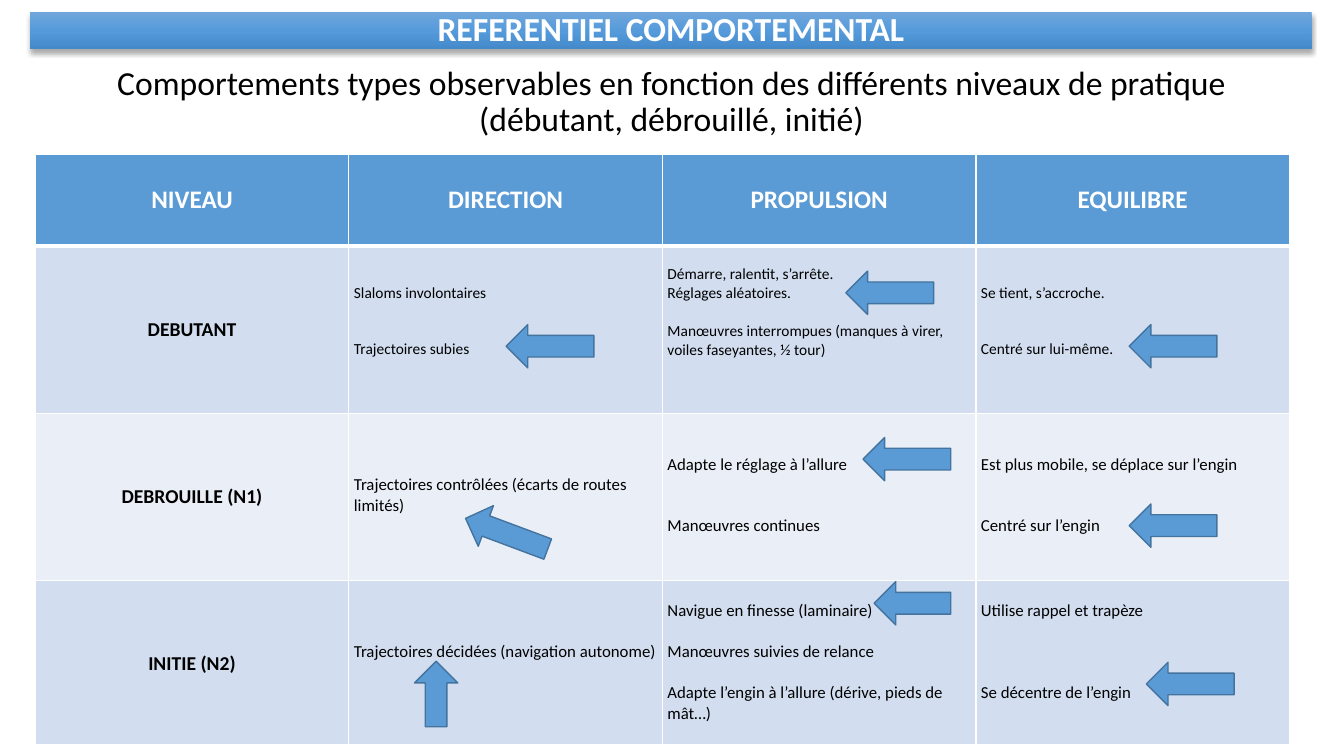
from pptx import Presentation
from pptx.dml.color import RGBColor
from pptx.enum.shapes import MSO_SHAPE as Shape
from pptx.enum.text import MSO_ANCHOR as Anchor, PP_ALIGN as Align
from pptx.oxml import parse_xml
from pptx.util import Inches, Pt

TITLE = "REFERENTIEL COMPORTEMENTAL"
SUBTITLE = ("Comportements types observables en fonction des différents niveaux de pratique"
            "\v(débutant, débrouillé, initié)")
HEADERS = ["NIVEAU", "DIRECTION", "PROPULSION", "EQUILIBRE"]

# Each text is preceded by the number of line heights left empty above it.
LEVELS = [
    ("DEBUTANT", 11, [
        [(2, "Slaloms involontaires"), (2, "Trajectoires subies")],
        [(1, "Démarre, ralentit, s’arrête."), (0, "Réglages aléatoires."),
         (1, "Manœuvres interrompues (manques à virer, voiles faseyantes, ½ tour)")],
        [(2, "Se tient, s’accroche."), (2, "Centré sur lui-même.")],
    ]),
    ("DEBROUILLE (N1)", 12, [
        [(3, "Trajectoires contrôlées (écarts de routes limités)")],
        [(2, "Adapte le réglage à l’allure"), (2, "Manœuvres continues")],
        [(2, "Est plus mobile, se déplace sur l’engin"), (2, "Centré sur l’engin")],
    ]),
    ("INITIE (N2)", 12, [
        [(3, "Trajectoires décidées (navigation autonome)")],
        [(1, "Navigue en finesse (laminaire)"), (1, "Manœuvres suivies de relance"),
         (1, "Adapte l’engin à l’allure (dérive, pieds de mât…)")],
        [(1, "Utilise rappel et trapèze"), (3, "Se décentre de l’engin")],
    ]),
]
ROW_HEIGHTS = [0.91, 1.66, 1.66, 1.63]
COLUMN_WIDTH = 3.11
ROW_FILLS = ["D2DEEF", "EAEFF7"]
LINE_HEIGHT = 1.22

ARROWS = [
    (5.02, 3.22, 0.87, 0), (4.59, 5.08, 0.87, 20.5), (4, 6.67, 0.65, 90),
    (8.39, 2.69, 0.87, 0), (8.56, 4.34, 0.87, 0), (8.67, 5.77, 0.76, 0),
    (11.2, 3.22, 0.87, 0), (11.2, 5, 0.87, 0), (11.37, 6.57, 0.87, 0),
]
ARROW_HEIGHT = 0.43

NAMESPACE = 'xmlns:a="http://schemas.openxmlformats.org/drawingml/2006/main"'
TITLE_STOPS = [(0, "71A6DB"), (50, "559BDB"), (100, "448ACA")]


def color(value):
    return RGBColor.from_string(value)


def place(shape, left, top, width, height):
    shape.left, shape.top = Inches(left), Inches(top)
    shape.width, shape.height = Inches(width), Inches(height)


def format_paragraph(para, size, ink, bold, align):
    para.alignment = align
    for span in para.runs:
        span.font.name = "Calibri"
        span.font.size = Pt(size)
        span.font.bold = bold
        span.font.color.rgb = color(ink)


def shade_title(shape):
    stops = "".join(f'<a:gs pos="{pos * 1000}"><a:srgbClr val="{value}"/></a:gs>'
                    for pos, value in TITLE_STOPS)
    shape._element.spPr.append(parse_xml(
        f'<a:gradFill {NAMESPACE} rotWithShape="1"><a:gsLst>{stops}</a:gsLst>'
        '<a:lin ang="5400000" scaled="0"/></a:gradFill>'))
    shape._element.spPr.append(parse_xml(
        f'<a:effectLst {NAMESPACE}><a:outerShdw blurRad="{Pt(3.5)}" dist="{Pt(2.2)}" '
        'dir="5400000" algn="ctr" rotWithShape="0"><a:srgbClr val="000000">'
        '<a:alpha val="32000"/></a:srgbClr></a:outerShdw></a:effectLst>'))


def border_cell(cell, row):
    widths = {"lnL": 1, "lnR": 1, "lnT": 3 if row == 1 else 1, "lnB": 3 if row == 0 else 1}
    for side, width in widths.items():
        cell._tc.get_or_add_tcPr().append(parse_xml(
            f'<a:{side} {NAMESPACE} w="{Pt(width)}"><a:solidFill>'
            f'<a:srgbClr val="FFFFFF"/></a:solidFill></a:{side}>'))


def fill_cell(table, row, column, texts, size, fill, ink, bold, align):
    cell = table.cell(row, column)
    border_cell(cell, row)
    cell.fill.solid()
    cell.fill.fore_color.rgb = color(fill)
    cell.margin_left = cell.margin_right = Inches(0.05)
    cell.margin_top = Pt(texts[0][0] * size * LINE_HEIGHT)
    cell.margin_bottom = 0
    cell.text_frame.text = "\n".join(text for _, text in texts)
    for index, para in enumerate(cell.text_frame.paragraphs):
        if index:
            para.space_before = Pt(texts[index][0] * size * LINE_HEIGHT)
        format_paragraph(para, size, ink, bold, align)


def add_levels(page):
    frame = page.shapes.add_table(
        len(LEVELS) + 1, len(HEADERS), Inches(0.35), Inches(1.53),
        Inches(COLUMN_WIDTH * len(HEADERS)), Inches(sum(ROW_HEIGHTS)))
    table = frame.table
    for column in table.columns:
        column.width = Inches(COLUMN_WIDTH)
    for row, height in zip(table.rows, ROW_HEIGHTS):
        row.height = Inches(height)
    for column, header in enumerate(HEADERS):
        fill_cell(table, 0, column, [(1, header)], 18, "5B9BD5", "FFFFFF", True, Align.CENTER)
    for row, (level, size, cells) in enumerate(LEVELS, 1):
        fill = ROW_FILLS[(row - 1) % 2]
        fill_cell(table, row, 0, [(3, level)], 14, fill, "000000", True, Align.CENTER)
        for column, texts in enumerate(cells, 1):
            fill_cell(table, row, column, texts, size, fill, "000000", False, Align.LEFT)


def add_arrow(page, left, top, width, rotation):
    arrow = page.shapes.add_shape(Shape.LEFT_ARROW, Inches(left), Inches(top),
                                  Inches(width), Inches(ARROW_HEIGHT))
    arrow.rotation = rotation
    arrow.shadow.inherit = False
    arrow.fill.solid()
    arrow.fill.fore_color.rgb = color("5B9BD5")
    arrow.line.color.rgb = color("43739E")
    arrow.line.width = Pt(1)


def main():
    deck = Presentation()
    deck.slide_width, deck.slide_height = Inches(13.33), Inches(7.5)
    page = deck.slides.add_slide(deck.slide_layouts[5])

    title = page.shapes.title
    place(title, 0.3, 0.12, 12.71, 0.37)
    shade_title(title)
    title.text_frame.text = TITLE
    title.text_frame.vertical_anchor = Anchor.MIDDLE
    title.text_frame.paragraphs[0].line_spacing = 0.9
    format_paragraph(title.text_frame.paragraphs[0], 24, "FFFFFF", True, Align.CENTER)

    box = page.shapes.add_textbox(Inches(0.35), Inches(0.61), Inches(12.62), Inches(0.85))
    box.text_frame.word_wrap = True
    box.text_frame.text = SUBTITLE
    box.text_frame.paragraphs[0].line_spacing = 0.9
    format_paragraph(box.text_frame.paragraphs[0], 24, "000000", False, Align.CENTER)

    add_levels(page)
    for arrow in ARROWS:
        add_arrow(page, *arrow)
    deck.save("out.pptx")


if __name__ == "__main__":
    main()
